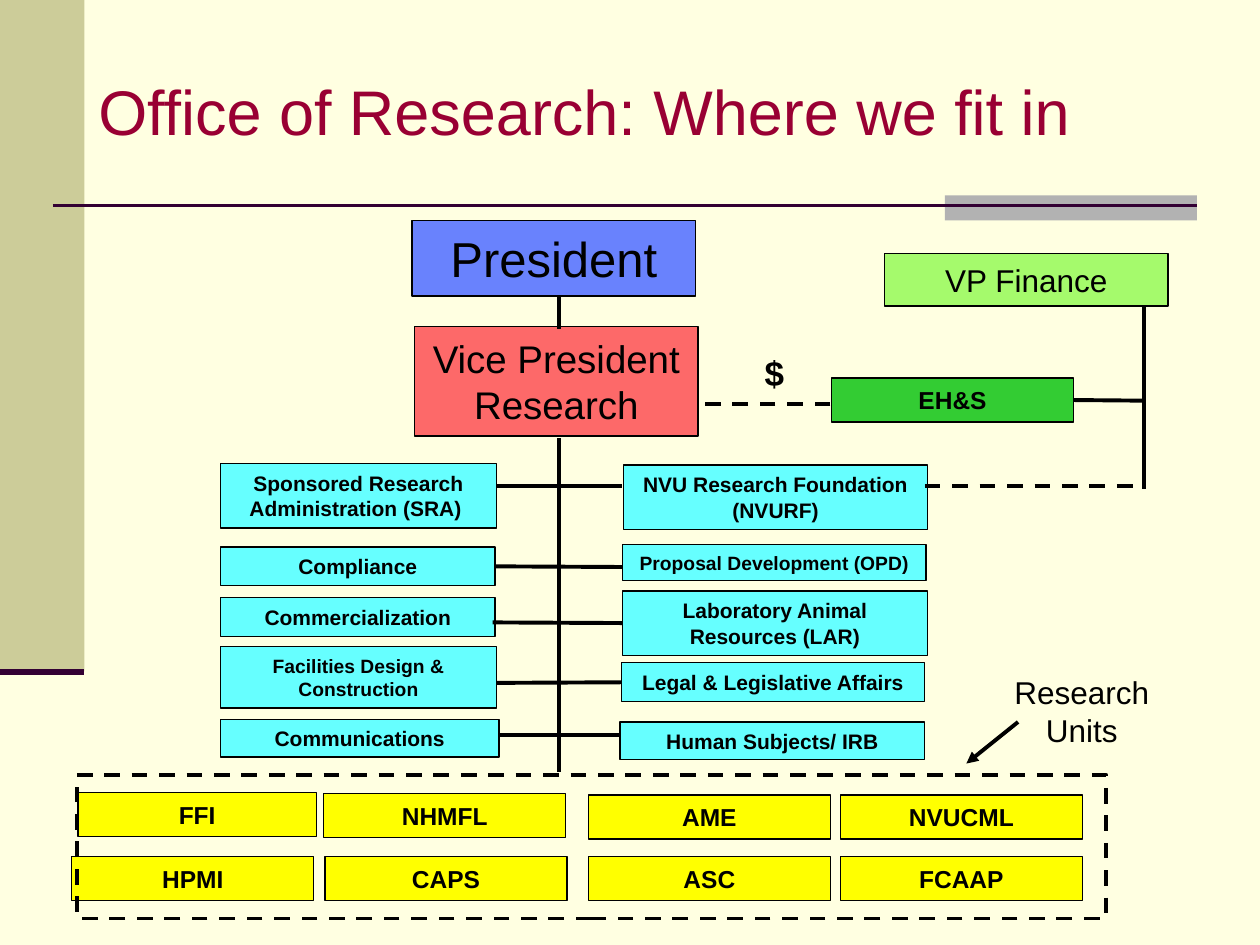
from dataclasses import dataclass
from typing import Optional

import pptx
import pptx.dml.color
import pptx.enum.dml
import pptx.enum.shapes
import pptx.enum.text
import pptx.oxml
import pptx.oxml.ns
import pptx.util
from pptx.util import Inches

RGBColor = pptx.dml.color.RGBColor
ALIGN = pptx.enum.text.PP_ALIGN
MIDDLE = pptx.enum.text.MSO_ANCHOR.MIDDLE
RECTANGLE = pptx.enum.shapes.MSO_SHAPE.RECTANGLE
STRAIGHT = pptx.enum.shapes.MSO_CONNECTOR.STRAIGHT
DASH = pptx.enum.dml.MSO_LINE.DASH

CREAM = RGBColor(0xFF, 0xFF, 0xE1)
KHAKI = RGBColor(0xCC, 0xCC, 0x99)
GRAY = RGBColor(0xB2, 0xB2, 0xB2)
PLUM = RGBColor(0x33, 0x00, 0x33)
CRIMSON = RGBColor(0x99, 0x00, 0x33)
BLACK = RGBColor(0x00, 0x00, 0x00)
YELLOW = RGBColor(0xFF, 0xFF, 0x00)
CYAN = RGBColor(0x66, 0xFF, 0xFF)
RED = RGBColor(0xFD, 0x69, 0x69)
LIME = RGBColor(0xA5, 0xFA, 0x6C)
GREEN = RGBColor(0x33, 0xCC, 0x33)
BLUE = RGBColor(0x69, 0x82, 0xFD)

LEFT_SIDE, RIGHT_SIDE = 1, 3
TRUNK_X = 4.44
FINANCE_X = 9.08


@dataclass
class Box:
    text: str
    left: float
    top: float
    width: float
    height: float
    fill: Optional[RGBColor]
    size: float = 12
    bold: bool = True


@dataclass
class Link:
    """A line, joined to the named boxes where it meets the middle of a side."""
    x1: float
    y1: float
    x2: float
    y2: float
    dashed: bool = False
    from_box: str = ""
    to_box: str = ""
    color: RGBColor = BLACK
    weight: float = 2.25
    arrow: bool = False


def unit(text: str, left: float, top: float, width: float = 1.92) -> Box:
    return Box(text, left, top, width, 0.35, YELLOW, 14)


def office(text: str, left: float, top: float, width: float, height: float,
           size: float = 12) -> Box:
    return Box(text, left, top, width, height, CYAN, size)


UNITS = [
    unit("FFI", 0.62, 6.29, 1.89), unit("NHMFL", 2.57, 6.3),
    unit("AME", 4.67, 6.31), unit("NVUCML", 6.67, 6.31),
    unit("HPMI", 0.57, 6.8), unit("CAPS", 2.58, 6.8),
    unit("ASC", 4.67, 6.8), unit("FCAAP", 6.67, 6.8),
]
OFFICES = [
    office("Sponsored Research Administration (SRA) ", 1.75, 3.68, 2.19, 0.51),
    office("Compliance", 1.75, 4.34, 2.18, 0.31),
    office("Commercialization", 1.75, 4.74, 2.18, 0.31),
    office("Facilities Design & Construction", 1.75, 5.13, 2.19, 0.49, 11),
    office("Communications", 1.75, 5.71, 2.21, 0.3),
    office("NVU Research Foundation (NVURF)", 4.95, 3.69, 2.41, 0.51),
    office("Proposal Development (OPD)", 4.94, 4.32, 2.41, 0.29, 11),
    office("Laboratory Animal Resources (LAR)", 4.94, 4.69, 2.42, 0.51),
    office("Legal & Legislative Affairs", 4.93, 5.26, 2.41, 0.31),
    office("Human Subjects/ IRB", 4.92, 5.73, 2.42, 0.3),
]
LEADERS = [
    Box("President", 3.27, 1.75, 2.25, 0.6, BLUE, 28, False),
    Box("Vice President Research", 3.29, 2.59, 2.25, 0.87, RED, 22, False),
    Box("VP Finance", 7.02, 2.01, 2.25, 0.42, LIME, 18, False),
    Box("EH&S", 6.6, 3, 1.92, 0.35, GREEN, 14),
]
LINKS = [
    Link(TRUNK_X, 2.35, TRUNK_X, 2.61),
    Link(TRUNK_X, 3.48, TRUNK_X, 6.13),
    Link(FINANCE_X, 2.44, FINANCE_X, 3.88),
    Link(7.34, 3.86, FINANCE_X, 3.86, dashed=True),
    Link(6.59, 3.21, 5.54, 3.21, dashed=True),
    Link(8.52, 3.18, FINANCE_X, 3.18, from_box="EH&S"),
    Link(3.94, 3.86, 4.94, 3.86),
    Link(3.94, 4.5, 4.94, 4.5, from_box="Compliance"),
    Link(3.91, 4.94, 4.94, 4.94, to_box="Laboratory Animal Resources (LAR)"),
    Link(3.94, 5.42, 4.94, 5.42, to_box="Legal & Legislative Affairs"),
    Link(3.96, 5.83, 4.92, 5.83),
    Link(8.08, 5.73, 7.67, 6.06, arrow=True),
]


def write(frame, text: str, size: float, color: RGBColor = BLACK,
          bold: bool = False, align=ALIGN.CENTER, wrap: bool = True) -> None:
    frame.word_wrap = wrap
    frame.vertical_anchor = MIDDLE
    paragraph = frame.paragraphs[0]
    paragraph.alignment = align
    run = paragraph.add_run()
    run.text = text
    run.font.name = "Arial"
    run.font.size = pptx.util.Pt(size)
    run.font.bold = bold
    run.font.color.rgb = color


def add_rectangle(slide, left: float, top: float, width: float, height: float,
                  fill: Optional[RGBColor]):
    rectangle = slide.shapes.add_shape(
        RECTANGLE, Inches(left), Inches(top), Inches(width), Inches(height))
    rectangle.shadow.inherit = False
    if fill is None:
        rectangle.fill.background()
    else:
        rectangle.fill.solid()
        rectangle.fill.fore_color.rgb = fill
    rectangle.line.fill.background()
    return rectangle


def add_box(slide, box: Box):
    rectangle = add_rectangle(slide, box.left, box.top, box.width, box.height, box.fill)
    rectangle.line.color.rgb = BLACK
    rectangle.line.width = pptx.util.Pt(0.75)
    write(rectangle.text_frame, box.text, box.size, bold=box.bold)
    return rectangle


def add_link(slide, link: Link, boxes: dict) -> None:
    connector = slide.shapes.add_connector(
        STRAIGHT, Inches(link.x1), Inches(link.y1), Inches(link.x2), Inches(link.y2))
    if link.from_box:
        connector.begin_connect(boxes[link.from_box], RIGHT_SIDE)
    if link.to_box:
        connector.end_connect(boxes[link.to_box], LEFT_SIDE)
    connector.line.color.rgb = link.color
    connector.line.width = pptx.util.Pt(link.weight)
    if link.dashed:
        connector.line.dash_style = DASH
    if link.arrow:
        connector.line._get_or_add_ln().append(pptx.oxml.parse_xml(
            f'<a:tailEnd {pptx.oxml.ns.nsdecls("a")} type="triangle"/>'))
    connector._element.spPr.append(pptx.oxml.parse_xml(
        f'<a:effectLst {pptx.oxml.ns.nsdecls("a")}/>'))


def add_label(slide, text: str, left: float, top: float, width: float,
              height: float, size: float, bold: bool, wrap: bool) -> None:
    label = slide.shapes.add_textbox(
        Inches(left), Inches(top), Inches(width), Inches(height))
    write(label.text_frame, text, size, bold=bold, wrap=wrap)


def main() -> None:
    deck = pptx.Presentation()
    deck.slide_width, deck.slide_height = Inches(10), Inches(7.5)
    slide = deck.slides.add_slide(deck.slide_layouts[5])
    slide.background.fill.solid()
    slide.background.fill.fore_color.rgb = CREAM

    title = slide.shapes.title
    title.left, title.top = Inches(0.68), Inches(0.25)
    title.width, title.height = Inches(8.5), Inches(1.25)
    write(title.text_frame, "Office of Research: Where we fit in", 36, CRIMSON,
          align=ALIGN.LEFT)

    add_rectangle(slide, 0, 0, 0.67, 5.33, KHAKI)
    add_rectangle(slide, 7.5, 1.55, 2, 0.2, GRAY)
    add_link(slide, Link(0.42, 1.63, 9.5, 1.63, color=PLUM, weight=1.5), {})
    add_link(slide, Link(0, 5.33, 0.67, 5.33, color=PLUM, weight=3.5), {})

    boxes = {box.text: add_box(slide, box) for box in UNITS + OFFICES + LEADERS}
    for link in LINKS:
        add_link(slide, link, boxes)

    units_border = add_rectangle(slide, 0.61, 6.15, 8.17, 1.14, None)
    units_border.line.color.rgb = BLACK
    units_border.line.width = pptx.util.Pt(2.25)
    units_border.line.dash_style = DASH

    add_label(slide, "$", 5.97, 2.74, 0.33, 0.44, 20, bold=True, wrap=False)
    add_label(slide, "Research Units", 7.75, 5.29, 1.67, 0.7, 18, bold=False, wrap=True)
    deck.save("out.pptx")


if __name__ == "__main__":
    main()
